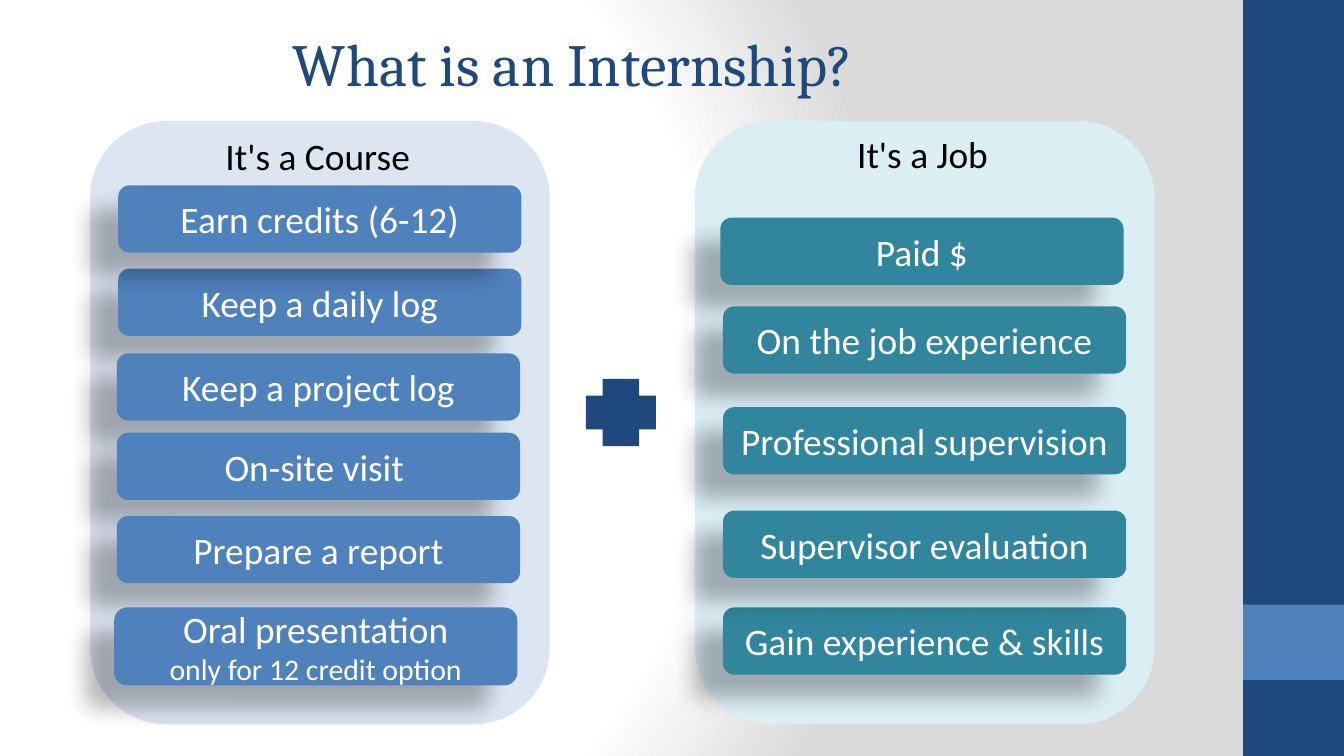
from dataclasses import dataclass

from pptx import Presentation
from pptx.dml.color import RGBColor
from pptx.enum.shapes import MSO_SHAPE
from pptx.enum.text import MSO_ANCHOR, MSO_AUTO_SIZE, PP_ALIGN
from pptx.oxml import parse_xml
from pptx.oxml.ns import nsdecls, qn
from pptx.util import Inches, Pt

RECTANGLE = MSO_SHAPE.RECTANGLE
ROUNDED = MSO_SHAPE.ROUNDED_RECTANGLE
CROSS = MSO_SHAPE.CROSS
TOP = MSO_ANCHOR.TOP
MIDDLE = MSO_ANCHOR.MIDDLE
LEFT = PP_ALIGN.LEFT
CENTER = PP_ALIGN.CENTER
GROW = MSO_AUTO_SIZE.SHAPE_TO_FIT_TEXT
TITLE_ONLY = 5
PAGE_WIDTH = 10
PAGE_HEIGHT = PAGE_WIDTH * 9 / 16


@dataclass(frozen=True)
class Theme:
    navy: str = "1F497D"
    blue: str = "4F81BD"
    teal: str = "31859C"
    pale_blue: str = "DCE6F2"
    pale_teal: str = "DBEEF4"
    white: str = "FFFFFF"
    grey: str = "DADADA"
    black: str = "000000"
    heading_font: str = "Cambria"
    body_font: str = "Calibri"
    title_size: int = 32
    body_size: int = 20
    note_size: int = 16


THEME = Theme()

COURSE_BUTTONS = [
    (0.88, 2, 0.5, ["Keep a daily log"]),
    (0.87, 2.63, 0.5, ["Keep a project log"]),
    (0.87, 3.22, 0.5, ["On-site visit "]),
    (0.87, 3.84, 0.5, ["Prepare a report"]),
    (0.85, 4.52, 0.58, ["Oral presentation", "only for 12 credit option"]),
    (0.88, 1.38, 0.5, ["Earn credits (6-12)"]),
]
JOB_BUTTONS = [
    (5.36, 1.62, 0.5, ["Paid $"]),
    (5.38, 2.28, 0.5, ["On the job experience"]),
    (5.38, 3.03, 0.5, ["Professional supervision"]),
    (5.38, 4.52, 0.5, ["Gain experience & skills"]),
    (5.38, 3.8, 0.5, ["Supervisor evaluation"]),
]


def write_text(para, text, *, size=THEME.body_size, color=THEME.black,
               font=THEME.body_font, align=CENTER):
    para.alignment = align
    span = para.add_run()
    span.text = text
    span.font.size = Pt(size)
    span.font.name = font
    span.font.color.rgb = RGBColor.from_string(color)


class SlideBuilder:
    def __init__(self, page, theme):
        self.page = page
        self.theme = theme

    def background(self):
        self.page.background.fill.gradient()
        gradient = self.page._element.find(".//" + qn("a:gradFill"))
        stops = "".join(
            f'<a:gs pos="{position * 1000}"><a:srgbClr val="{color}"/></a:gs>'
            for position, color in [(0, self.theme.white), (75, self.theme.white),
                                    (100, self.theme.grey)])
        gradient.getparent().replace(gradient, parse_xml(
            f'<a:gradFill {nsdecls("a")} rotWithShape="1"><a:gsLst>{stops}</a:gsLst>'
            '<a:path path="circle">'
            '<a:fillToRect l="20000" t="50000" r="100000" b="50000"/>'
            '</a:path></a:gradFill>'))

    def title(self, text, left, top, width, height):
        box = self.page.shapes.title
        box.left, box.top = Inches(left), Inches(top)
        box.width, box.height = Inches(width), Inches(height)
        frame = box.text_frame
        frame.vertical_anchor = TOP
        frame.word_wrap = True
        write_text(frame.paragraphs[0], text, size=self.theme.title_size,
                   color=self.theme.navy, font=self.theme.heading_font, align=LEFT)

    def shape(self, kind, left, top, width, height, color):
        box = self.page.shapes.add_shape(
            kind, Inches(left), Inches(top), Inches(width), Inches(height))
        box.shadow.inherit = False
        box.fill.solid()
        box.fill.fore_color.rgb = RGBColor.from_string(color)
        box.line.fill.background()
        return box

    def heading(self, text, left, top):
        box = self.page.shapes.add_textbox(
            Inches(left), Inches(top), Inches(2.97), Inches(0.44))
        box.text_frame.word_wrap = True
        box.text_frame.auto_size = GROW
        write_text(box.text_frame.paragraphs[0], text)

    def button(self, left, top, height, lines, color):
        box = self.shape(ROUNDED, left, top, 3, height, color)
        effects = box._element.spPr.find(qn("a:effectLst"))
        effects.append(parse_xml(
            f'<a:outerShdw {nsdecls("a")} blurRad="{Pt(11.8)}" dist="{Pt(19.7)}" '
            f'dir="{141 * 60000}" algn="ctr" rotWithShape="0">'
            f'<a:srgbClr val="{self.theme.black}"><a:alpha val="28000"/></a:srgbClr>'
            '</a:outerShdw>'))
        frame = box.text_frame
        frame.word_wrap = True
        frame.vertical_anchor = MIDDLE
        sizes = [self.theme.body_size, self.theme.note_size]
        for index, (text, size) in enumerate(zip(lines, sizes)):
            para = frame.add_paragraph() if index else frame.paragraphs[0]
            write_text(para, text, size=size, color=self.theme.white)

    def panel(self, left, color):
        self.shape(ROUNDED, left, 0.9, 3.42, 4.49, color)

    def buttons(self, rows, color):
        for left, top, height, lines in rows:
            self.button(left, top, height, lines, color)


def main():
    deck = Presentation()
    deck.slide_width, deck.slide_height = Inches(PAGE_WIDTH), Inches(PAGE_HEIGHT)
    page = deck.slides.add_slide(deck.slide_layouts[TITLE_ONLY])
    builder = SlideBuilder(page, THEME)

    builder.background()
    builder.shape(RECTANGLE, 9.25, 0, 0.75, PAGE_HEIGHT, THEME.navy)
    builder.shape(RECTANGLE, 9.25, 4.5, 0.75, 0.56, THEME.blue)
    builder.title("What is an Internship?", 2.08, 0.15, 4.58, 0.64)

    builder.panel(0.67, THEME.pale_blue)
    builder.heading("It's a Course", 0.88, 0.94)
    builder.buttons(COURSE_BUTTONS, THEME.blue)

    builder.panel(5.17, THEME.pale_teal)
    builder.heading("It's a Job", 5.38, 0.93)
    builder.buttons(JOB_BUTTONS, THEME.teal)

    builder.shape(CROSS, 4.36, 2.82, 0.52, 0.5, THEME.navy)
    deck.save("out.pptx")


if __name__ == "__main__":
    main()
